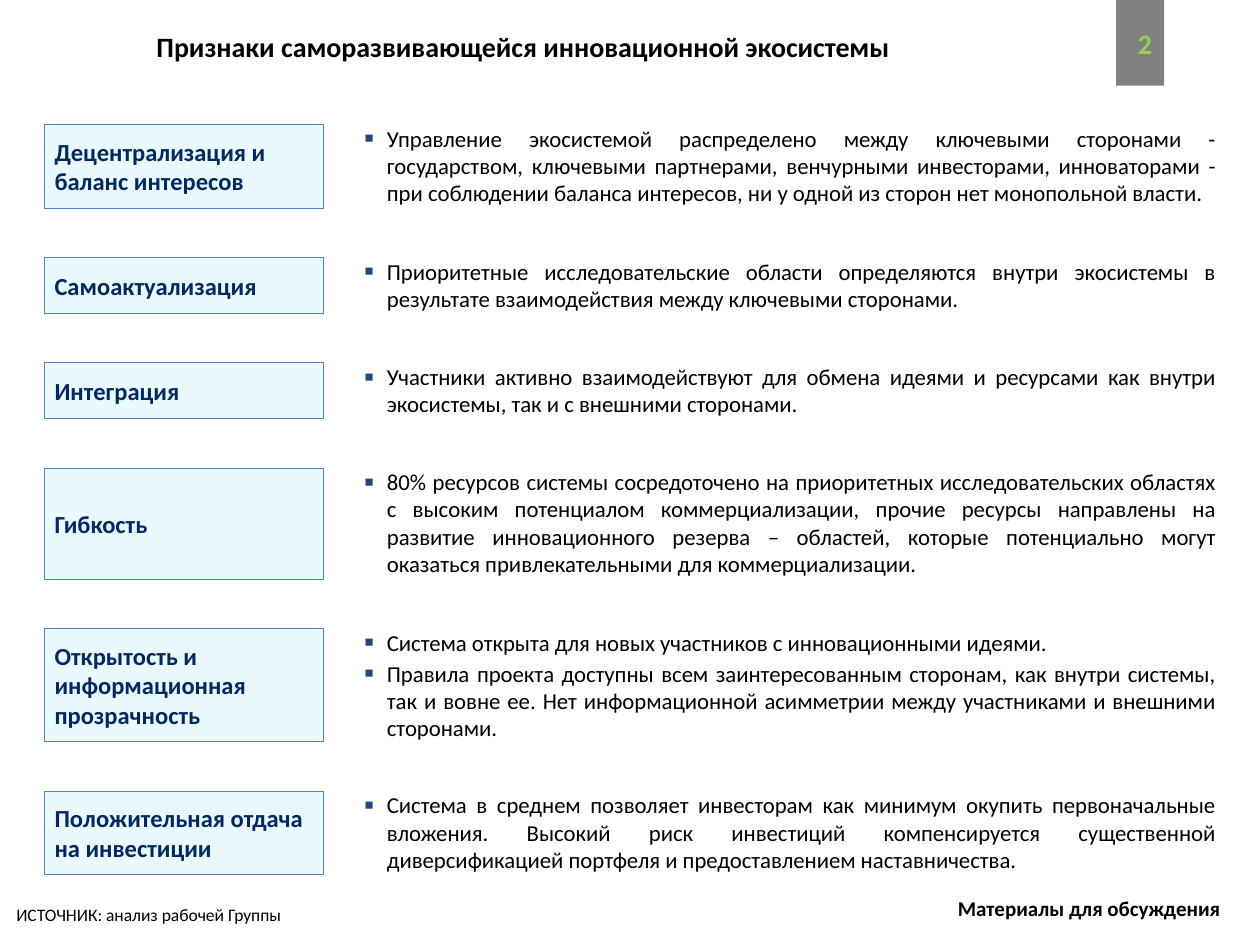
from lxml.etree import SubElement as Sub
from pptx import Presentation
from pptx.dml.color import RGBColor as Rgb
from pptx.enum.shapes import MSO_SHAPE as Form
from pptx.enum.text import MSO_ANCHOR as Anchor, PP_ALIGN as Align
from pptx.oxml.ns import qn
from pptx.util import Cm, Pt

TITLE = "Признаки саморазвивающейся инновационной экосистемы"
PAGE = "2"
NOTE = "Материалы для обсуждения"
SOURCE = "ИСТОЧНИК: анализ рабочей Группы"

# label, count of text lines, bullets
TRAITS = [
    ("Децентрализация и баланс интересов", 3, [
        "Управление экосистемой распределено между ключевыми сторонами - "
        "государством, ключевыми партнерами, венчурными инвесторами, инноваторами - "
        "при соблюдении баланса интересов, ни у одной из сторон нет монопольной власти."]),
    ("Самоактуализация", 2, [
        "Приоритетные исследовательские области определяются внутри экосистемы "
        "в результате взаимодействия между ключевыми сторонами."]),
    ("Интеграция", 2, [
        "Участники активно взаимодействуют для обмена идеями и ресурсами "
        "как внутри экосистемы, так и с внешними сторонами."]),
    ("Гибкость", 4, [
        "80% ресурсов системы сосредоточено на приоритетных исследовательских областях "
        "с высоким потенциалом коммерциализации, прочие ресурсы направлены на развитие "
        "инновационного резерва – областей, которые потенциально могут оказаться "
        "привлекательными для коммерциализации."]),
    ("Открытость и информационная прозрачность", 4, [
        "Система открыта для новых участников с инновационными идеями.",
        "Правила проекта доступны всем заинтересованным сторонам, как внутри системы, "
        "так и вовне ее. Нет информационной асимметрии между участниками и внешними "
        "сторонами."]),
    ("Положительная отдача на инвестиции", 3, [
        "Система в среднем позволяет инвесторам как минимум окупить первоначальные "
        "вложения. Высокий риск инвестиций компенсируется существенной "
        "диверсификацией портфеля и предоставлением наставничества."]),
]

COLORS = {"text": "000000", "label": "002960", "fill": "7CDFF6", "line": "4F81BD",
          "bullet": "1F497D", "tab": "808080", "page": "92D050"}
FONT = "Calibri"
TOP, GAP, LINE, EXTRA = 2.51, 1.0, 0.56, 0.04


def color(name):
    return Rgb.from_string(COLORS[name])


def write(shape, lines, size, bold=False, ink="text", align=Align.LEFT,
          anchor=Anchor.TOP, pad=None, wrap=True):
    """Fill a shape with one paragraph per line; pad is the inset in cm."""
    frame = shape.text_frame
    frame.text = "\n".join(lines)
    frame.word_wrap = wrap
    frame.vertical_anchor = anchor
    if pad is not None:
        frame.margin_left = frame.margin_right = Cm(pad)
        frame.margin_top = frame.margin_bottom = Cm(pad)
    for para in frame.paragraphs:
        para.alignment = align
        for run in para.runs:
            font = run.font
            font.name, font.size, font.bold = FONT, Pt(size), bold
            font.color.rgb = color(ink)


def add_text(slide, box, lines, size, **style):
    shape = slide.shapes.add_textbox(*map(Cm, box))
    write(shape, lines, size, **style)
    return shape


def add_rect(slide, box, fill):
    shape = slide.shapes.add_shape(Form.RECTANGLE, *map(Cm, box))
    shape.shadow.inherit = False
    shape.fill.solid()
    shape.fill.fore_color.rgb = color(fill)
    shape.line.fill.background()
    return shape


def add_label(slide, box, text):
    shape = add_rect(slide, box, "fill")
    tint = shape.fill._xPr.find(".//" + qn("a:srgbClr"))
    Sub(tint, qn("a:alpha"), val="16000")
    shape.line.color.rgb = color("line")
    shape.line.width = Pt(0.25)
    write(shape, [text], 14, bold=True, ink="label", anchor=Anchor.MIDDLE, pad=0.2)


def add_bullets(slide, box, lines):
    shape = add_text(slide, box, lines, 13, align=Align.JUSTIFY, pad=0)
    for i, para in enumerate(shape.text_frame.paragraphs):
        para.space_before = Pt(1 if i else 0)
        para.space_after = Pt(1)
        props = para._p.get_or_add_pPr()
        props.set("marL", str(Cm(0.48)))
        props.set("indent", str(Cm(-0.46)))
        Sub(Sub(props, qn("a:buClr")), qn("a:srgbClr"), val=COLORS["bullet"])
        Sub(props, qn("a:buSzPct"), val="125000")
        Sub(props, qn("a:buFont"), typeface="Arial")
        Sub(props, qn("a:buChar"), char="▪")


def main():
    deck = Presentation()
    deck.slide_width, deck.slide_height = Cm(25.4), Cm(19.05)
    slide = deck.slides.add_slide(deck.slide_layouts[5])

    title = slide.shapes.title
    title.left, title.top, title.width, title.height = map(Cm, (2.9, 0.13, 19.6, 1.6))
    write(title, [TITLE], 16, bold=True, anchor=Anchor.MIDDLE)

    add_rect(slide, (22.5, 0, 0.97, 1.73), "tab")
    add_text(slide, (22.48, 0.36, 1.2, 1.02), [PAGE], 16, bold=True, ink="page",
             align=Align.CENTER, anchor=Anchor.MIDDLE)

    top = TOP
    for label, count, lines in TRAITS:
        height = count * LINE + (len(lines) - 1) * EXTRA
        add_label(slide, (0.9, top, 5.62, height), label)
        add_bullets(slide, (7.32, top, 17.17, height), lines)
        top += height + GAP

    add_text(slide, (19.06, 17.93, 5.84, 0.76), [NOTE], 12, bold=True, wrap=False)
    add_text(slide, (0.33, 18.23, 23.4, 0.43), [SOURCE], 10,
             anchor=Anchor.MIDDLE, pad=0)
    deck.save("out.pptx")


if __name__ == "__main__":
    main()
